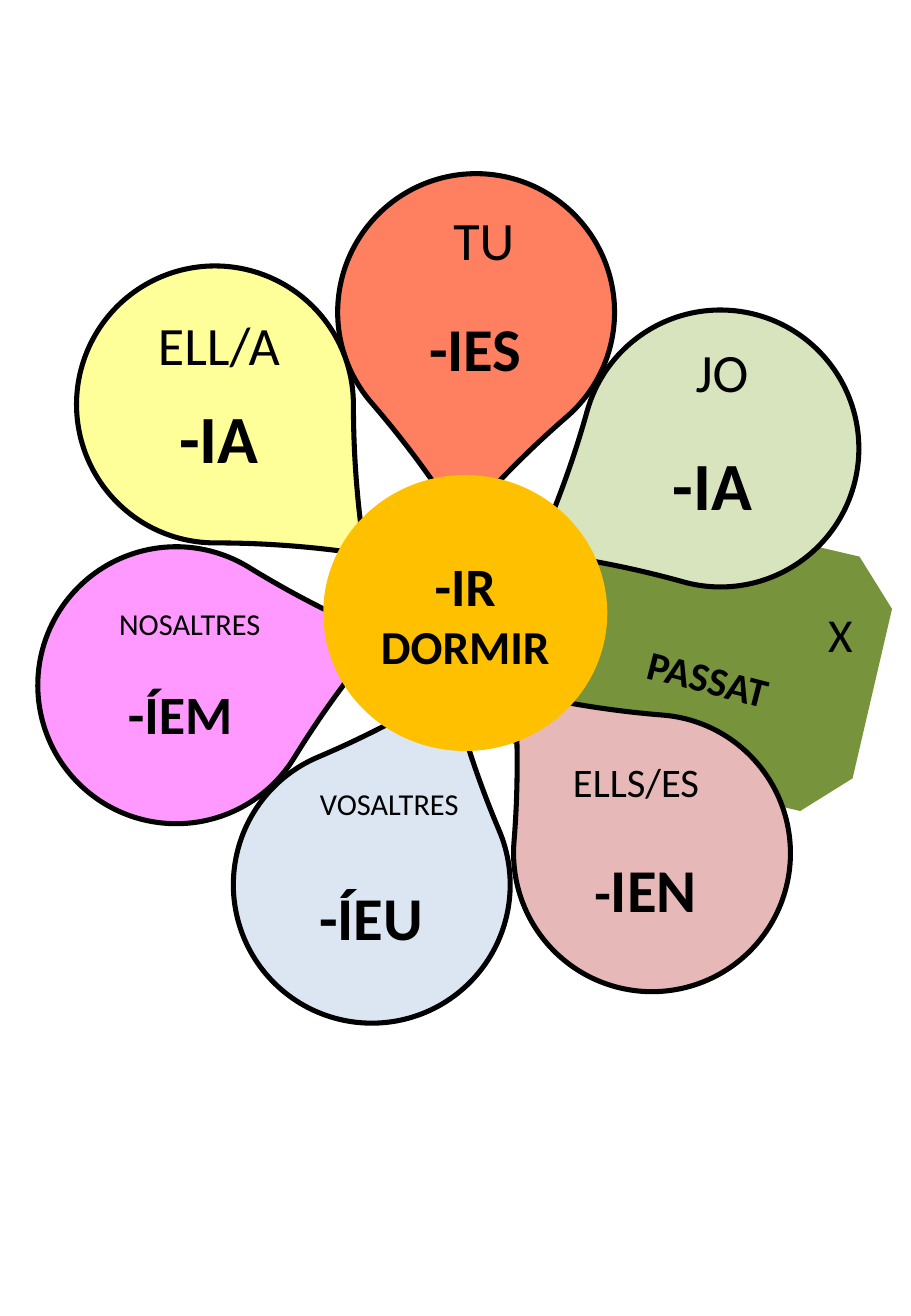
from lxml import etree
from pptx import Presentation
from pptx.dml.color import RGBColor
from pptx.enum.shapes import MSO_SHAPE
from pptx.enum.text import MSO_ANCHOR, PP_ALIGN
from pptx.oxml.ns import qn
from pptx.util import Cm, Pt

TEARDROP = MSO_SHAPE.TEAR
OVAL = MSO_SHAPE.OVAL
SNIPPED = MSO_SHAPE.SNIP_2_SAME_RECTANGLE
CENTER = PP_ALIGN.CENTER
LEFT = PP_ALIGN.LEFT
MIDDLE = MSO_ANCHOR.MIDDLE

COLOURS = {
    "ink": "000000",
    "leaf": "77933C",
    "heart": "FFC000",
    "tu": "FF3300",
    "jo": "D7E4BD",
    "ell": "FFFF99",
    "nosaltres": "FF99FF",
    "vosaltres": "DCE6F2",
    "ells": "E6B9B8",
}
PETAL_SIZE = 5.79
LABEL_WIDTH = 3.58

PETALS = [
    ("tu", 7.06, 3.63, 139.1),
    ("jo", 12.17, 6.48, 195.6),
    ("ell", 1.6, 5.56, 90),
    ("nosaltres", 0.79, 11.43, 31.6),
    ("vosaltres", 4.88, 15.6, 337),
    ("ells", 10.74, 14.94, 274.6),
]
PRONOUNS = [
    ("TU", 8.33, 4.19, 32),
    ("JO", 13.31, 6.96, 32),
    ("ELL/A", 2.79, 6.38, 32),
    ("NOSALTRES", 2.18, 12.52, 18),
    ("VOSALTRES", 6.35, 16.28, 18),
    ("ELLS/ES", 11.51, 15.7, 24),
]
ENDINGS = [
    ([("-IES", 36)], 8.15, 6.38),
    ([("-IA", 40)], 13.11, 9.14),
    ([("-IA", 40)], 2.79, 8.15),
    ([("-ÍEM", 32)], 1.98, 14.1),
    ([("-ÍEU", 36)], 5.97, 18.26),
    ([("-", 32), ("IEN", 36)], 11.71, 17.68),
]


class Flower:
    def __init__(self, slide, font="Calibri"):
        self.slide = slide
        self.font = font

    def colour(self, name):
        return RGBColor.from_string(COLOURS[name])

    def style(self, run, size, bold):
        run.font.name = self.font
        run.font.size = Pt(size)
        run.font.bold = bold
        run.font.color.rgb = self.colour("ink")

    def figure(self, preset, box, fill, rotation=0, adjustments=()):
        figure = self.slide.shapes.add_shape(preset, *map(Cm, box))
        figure.shadow.inherit = False
        figure.rotation = rotation
        figure.fill.solid()
        figure.fill.fore_color.rgb = self.colour(fill)
        figure.line.fill.background()
        for index, value in enumerate(adjustments):
            figure.adjustments[index] = value
        return figure

    def petal(self, fill, left, top, rotation):
        box = (left, top, PETAL_SIZE, PETAL_SIZE)
        petal = self.figure(TEARDROP, box, fill, rotation, [1.083])
        petal.line.color.rgb = self.colour("ink")
        petal.line.width = Pt(3)
        return petal

    def fade(self, petal, percent):
        fill_colour = petal.fill._xPr.find(qn("a:solidFill"))[0]
        etree.SubElement(fill_colour, qn("a:alpha")).set("val", str(percent * 1000))

    def heart(self, box, lines):
        heart = self.figure(OVAL, box, "heart")
        frame = heart.text_frame
        frame.vertical_anchor = MIDDLE
        frame.text = "\n".join(text for text, size in lines)
        for paragraph, (text, size) in zip(frame.paragraphs, lines):
            paragraph.alignment = CENTER
            self.style(paragraph.runs[0], size, True)

    def label(self, pieces, left, top, bold=False, width=LABEL_WIDTH,
              align=CENTER, wrap=True, rotation=0):
        height = max(size for text, size in pieces) * 0.0423 + 0.25
        label = self.slide.shapes.add_textbox(Cm(left), Cm(top), Cm(width), Cm(height))
        label.rotation = rotation
        label.text_frame.word_wrap = wrap
        paragraph = label.text_frame.paragraphs[0]
        paragraph.alignment = align
        for text, size in pieces:
            run = paragraph.add_run()
            run.text = text
            self.style(run, size, bold)


def main():
    deck = Presentation()
    deck.slide_width, deck.slide_height = Cm(19.05), Cm(27.51)
    flower = Flower(deck.slides.add_slide(deck.slide_layouts[6]))

    flower.figure(SNIPPED, (11.96, 10.03, 5.46, 7.29), "leaf", 103.1, [0.167, 0.041])
    petals = [flower.petal(*petal) for petal in PETALS]
    flower.fade(petals[0], 62)
    flower.heart((6.76, 9.93, 5.94, 5.77), [("-IR", 32), ("DORMIR", 28)])

    for pronoun, left, top, size in PRONOUNS:
        flower.label([(pronoun, size)], left, top)
    for ending, left, top in ENDINGS:
        flower.label(ending, left, top, bold=True)
    flower.label([("PASSAT", 24)], 13.28, 13.54, True, 3.1, LEFT, False, 14.4)
    flower.label([("X", 28)], 17.07, 12.52, False, 1.04, LEFT, False)

    deck.save("out.pptx")


if __name__ == "__main__":
    main()
